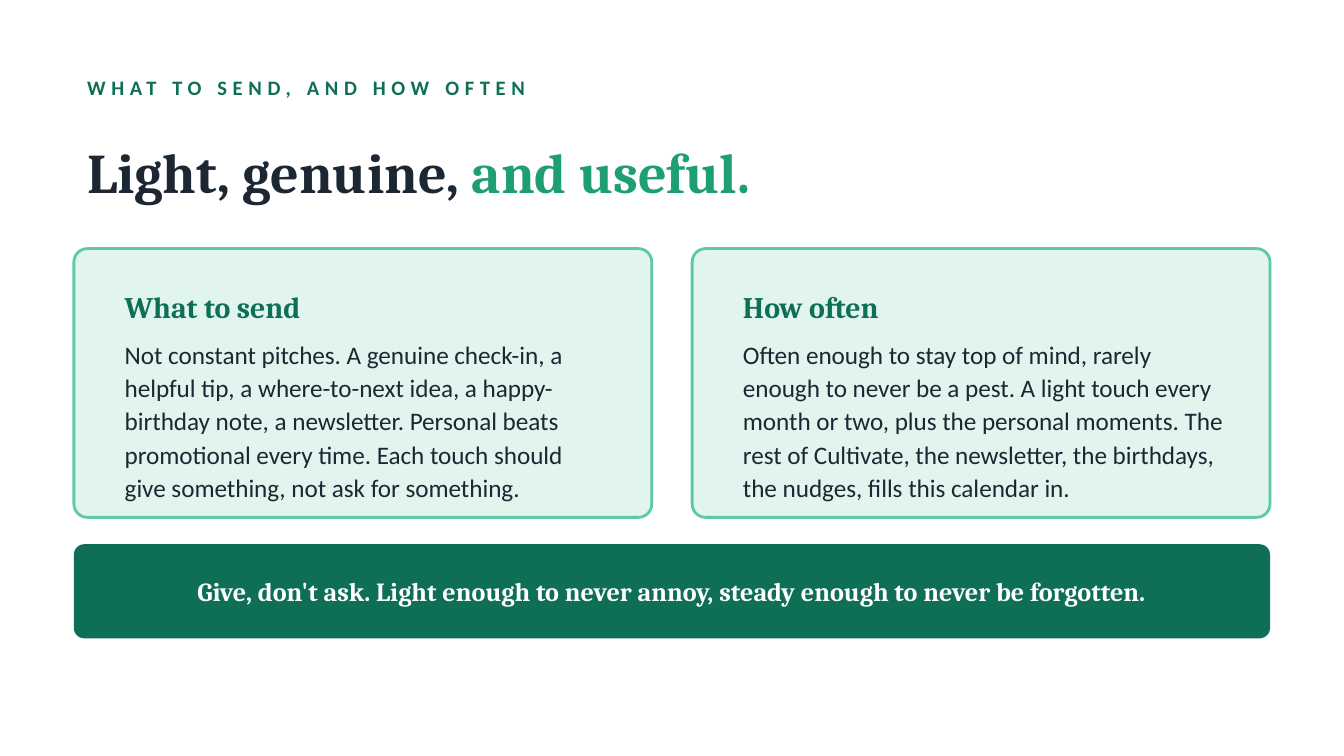
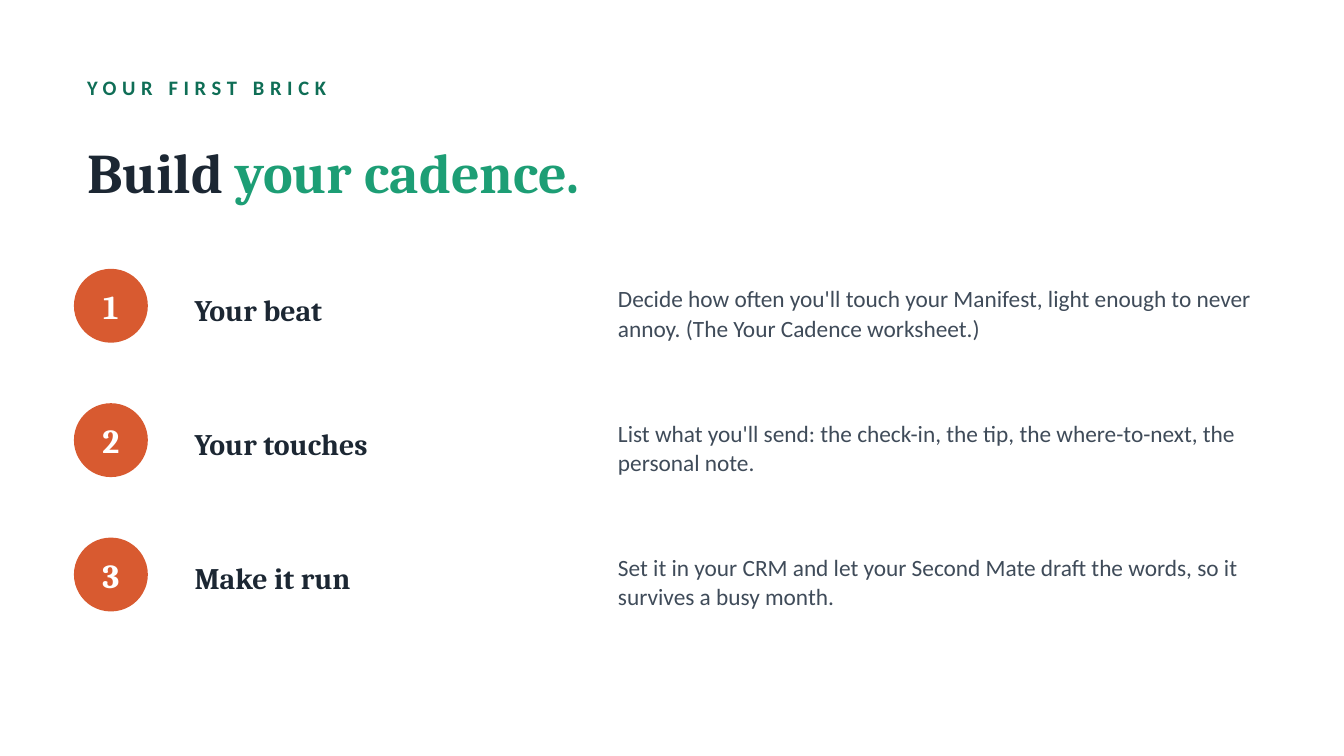
from dataclasses import dataclass
from typing import Optional

from pptx import Presentation as Deck
from pptx.dml.color import RGBColor as Rgb
from pptx.enum.shapes import MSO_SHAPE as Form
from pptx.enum.text import MSO_ANCHOR as Anchor, PP_ALIGN as Align
from pptx.util import Inches, Pt

Box = tuple[float, float, float, float]

HUES = {
    "paper": "FFFFFF",
    "ink": "1C2733",
    "slate": "3F4B59",
    "pine": "0F6E56",
    "green": "1D9E75",
    "mint": "5DCAA5",
    "pale": "E1F5EE",
    "rust": "D85A30",
}

LEFT, WIDE = 0.55, 8.9


@dataclass(frozen=True)
class Style:
    size: float
    face: str
    hue: str
    bold: bool = True
    align: Align = Align.LEFT
    lead: Optional[float] = None
    track: int = 0


@dataclass(frozen=True)
class Card:
    head: str
    body: str


@dataclass(frozen=True)
class Step:
    name: str
    note: str


STYLES = {
    "label": Style(11, "Calibri", "pine", track=300),
    "title": Style(30, "Cambria", "ink"),
    "head": Style(16, "Cambria", "pine"),
    "body": Style(13.5, "Calibri", "ink", bold=False, lead=1.1),
    "band": Style(14, "Cambria", "paper", align=Align.CENTER),
    "digit": Style(18, "Cambria", "paper", align=Align.CENTER),
    "name": Style(16, "Cambria", "ink"),
    "note": Style(12.5, "Calibri", "slate", bold=False, lead=1.05),
}

CARDS = [
    Card(
        "What to send",
        "Not constant pitches. A genuine check-in, a helpful tip, "
        "a where-to-next idea, a happy-birthday note, a newsletter. "
        "Personal beats promotional every time. "
        "Each touch should give something, not ask for something.",
    ),
    Card(
        "How often",
        "Often enough to stay top of mind, rarely enough to never be a pest. "
        "A light touch every month or two, plus the personal moments. "
        "The rest of Cultivate, the newsletter, the birthdays, the nudges, "
        "fills this calendar in.",
    ),
]

STEPS = [
    Step(
        "Your beat",
        "Decide how often you'll touch your Manifest, light enough to never "
        "annoy. (The Your Cadence worksheet.)",
    ),
    Step(
        "Your touches",
        "List what you'll send: the check-in, the tip, the where-to-next, "
        "the personal note.",
    ),
    Step(
        "Make it run",
        "Set it in your CRM and let your Second Mate draft the words, "
        "so it survives a busy month.",
    ),
]


def tint(key: str) -> Rgb:
    return Rgb.from_string(HUES[key])


def write(slide, box: Box, text: str, kind: str, tail: str = "") -> None:
    style = STYLES[kind]
    frame = slide.shapes.add_textbox(*map(Inches, box)).text_frame
    para = frame.paragraphs[0]
    for part, hue in ((text, style.hue), (tail, "green")):
        if not part:
            continue
        run = para.add_run()
        run.text = part
        looks = {"size": Pt(style.size), "name": style.face, "bold": style.bold}
        for key, value in looks.items():
            setattr(run.font, key, value)
        run.font.color.rgb = tint(hue)
        if style.track:
            run._r.get_or_add_rPr().set("spc", str(style.track))
    rules = (
        (frame, {"word_wrap": True, "vertical_anchor": Anchor.MIDDLE}),
        (para, {"alignment": style.align, "line_spacing": style.lead}),
    )
    for item, values in rules:
        for key, value in values.items():
            setattr(item, key, value)


def draw(slide, form: Form, box: Box, fill: str, edge: str = "",
         bend: Optional[float] = None) -> None:
    shape = slide.shapes.add_shape(form, *map(Inches, box))
    shape.shadow.inherit = False
    shape.fill.solid()
    shape.fill.fore_color.rgb = tint(fill)
    if edge:
        shape.line.color.rgb = tint(edge)
        shape.line.width = Pt(1.5)
    else:
        shape.line.fill.background()
    if bend is not None:
        shape.adjustments[0] = bend


def start(deck, label: str, title: str, tail: str):
    slide = deck.slides.add_slide(deck.slide_layouts[6])
    slide.background.fill.solid()
    slide.background.fill.fore_color.rgb = tint("paper")
    write(slide, (LEFT, 0.5, WIDE, 0.3), label, "label")
    write(slide, (LEFT, 0.85, WIDE, 0.85), title, "title", tail)
    return slide


def add_cards(slide) -> None:
    top, wide, gap = 1.85, 4.3, 0.3
    for spot, card in enumerate(CARDS):
        left = LEFT + spot * (wide + gap)
        draw(slide, Form.ROUNDED_RECTANGLE, (left, top, wide, 2),
             "pale", "mint", 0.05)
        write(slide, (left + 0.28, top + 0.18, 3.8, 0.5), card.head, "head")
        write(slide, (left + 0.28, top + 0.72, 3.8, 1.1), card.body, "body")


def add_band(slide, text: str) -> None:
    top, high, inset = 4.05, 0.7, 0.25
    draw(slide, Form.ROUNDED_RECTANGLE, (LEFT, top, WIDE, high),
         "pine", bend=0.11)
    write(slide, (LEFT + inset, top, WIDE - 2 * inset, high), text, "band")


def add_steps(slide) -> None:
    side = 0.55
    for count, step in enumerate(STEPS, 1):
        top = 1 + count
        disc = (LEFT, top, side, side)
        draw(slide, Form.OVAL, disc, "rust")
        write(slide, disc, str(count), "digit")
        write(slide, (1.35, top - 0.05, 3, 0.7), step.name, "name")
        write(slide, (4.5, top - 0.05, 5, 0.75), step.note, "note")


def main() -> None:
    deck = Deck()
    deck.slide_width = Inches(10)
    deck.slide_height = Inches(10 * 9 / 16)

    slide = start(deck, "WHAT TO SEND, AND HOW OFTEN",
                  "Light, genuine, ", "and useful.")
    add_cards(slide)
    add_band(slide, "Give, don't ask. Light enough to never annoy, "
                    "steady enough to never be forgotten.")

    slide = start(deck, "YOUR FIRST BRICK", "Build ", "your cadence.")
    add_steps(slide)

    deck.save("out.pptx")


if __name__ == "__main__":
    main()
